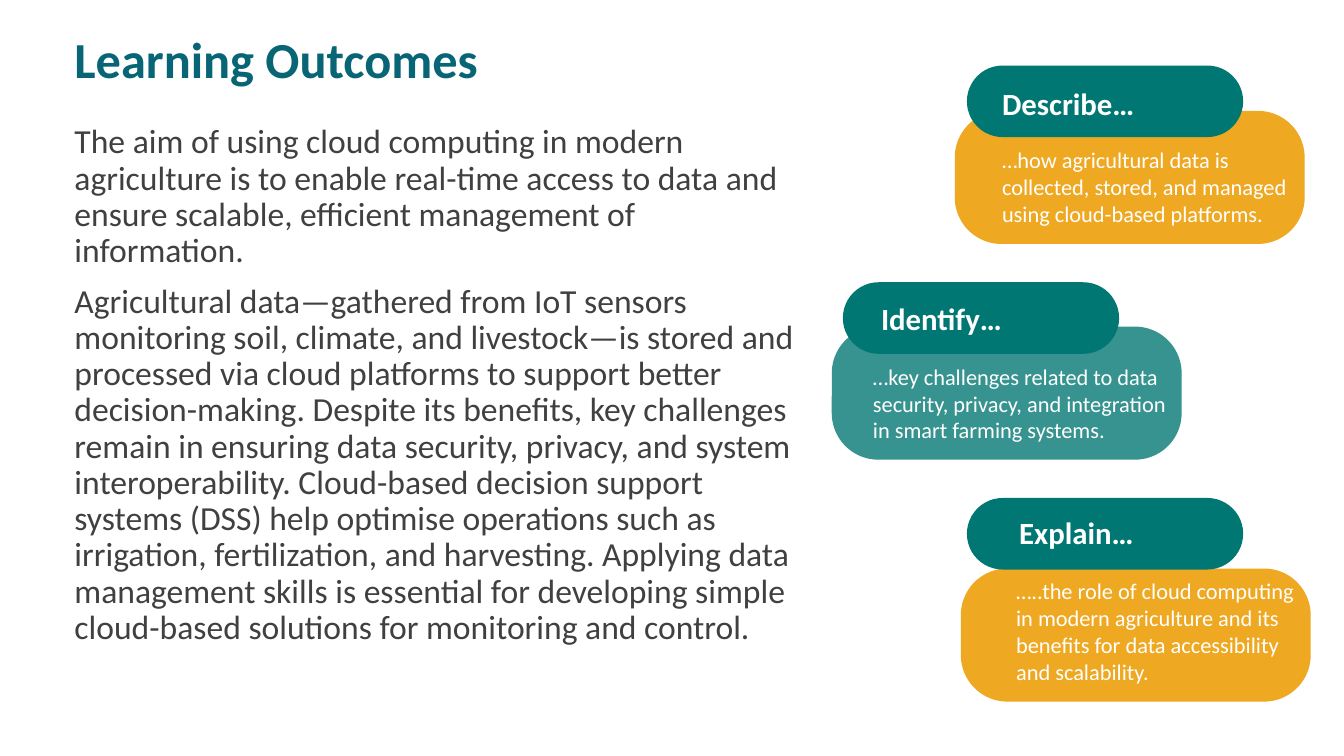
from lxml.etree import SubElement
from pptx import Presentation
from pptx.dml.color import RGBColor
from pptx.enum.shapes import MSO_SHAPE as SHAPE
from pptx.enum.text import MSO_ANCHOR as ANCHOR
from pptx.oxml.ns import qn
from pptx.util import Emu, Pt

EMU_PER_PX = 9144
TEAL, AMBER, WHITE = "007772", "EEA821", "FFFFFF"
TITLE_COLOR, BODY_COLOR = "086575", "404040"


def px(n):
    """Turn hundredths of an inch into EMU."""
    return Emu(n * EMU_PER_PX)


def rgb(value):
    """Turn a hex string into a colour."""
    return RGBColor.from_string(value)


class Deck:
    """Holds the style and the current slide."""

    font = "Calibri"
    card_size = (347, 132)
    pill_size = (274, 71)

    def __init__(self, prs):
        """Add a blank slide to draw on."""
        self.s = prs.slides.add_slide(prs.slide_layouts[6])

    def rounded(self, x, y, size, radius, color, alpha=100):
        """Draw a borderless rounded rectangle."""
        w, h = size
        sp = self.s.shapes.add_shape(SHAPE.ROUNDED_RECTANGLE, px(x), px(y), px(w), px(h))
        sp.adjustments[0] = radius
        sp.shadow.inherit = False
        sp.line.fill.background()
        sp.fill.solid()
        sp.fill.fore_color.rgb = rgb(color)
        if alpha < 100:
            clr = sp._element.spPr.find(qn("a:solidFill"))[0]
            SubElement(clr, qn("a:alpha"), val=str(alpha * 1000))

    def text(self, box, paragraphs, size, color, bold=False, spacing=None, gap=0):
        """Write paragraphs in a wrapping text box."""
        tf = self.s.shapes.add_textbox(*map(px, box)).text_frame
        tf.word_wrap = True
        tf.vertical_anchor = ANCHOR.TOP
        for i, words in enumerate(paragraphs):
            p = tf.add_paragraph() if i else tf.paragraphs[0]
            p.line_spacing = spacing
            if i:
                p.space_before = Pt(gap)
            r = p.add_run()
            r.text = words
            r.font.name = self.font
            r.font.size = Pt(size)
            r.font.bold = bold
            r.font.color.rgb = rgb(color)

    def card(self, card_at, pill_at, color, alpha, head_box, head, note_box, note):
        """Draw an outcome card with its heading pill."""
        self.rounded(*card_at, self.card_size, 0.35, color, alpha)
        self.rounded(*pill_at, self.pill_size, 0.5, TEAL)
        self.text(head_box, [head], 22, WHITE, bold=True)
        self.text(note_box, [note], 16, WHITE)


CARDS = [
    ((947, 110), (959, 65), AMBER, 100, (984, 79, 274, 47), "Describe…",
     (984, 140, 320, 118),
     "…how agricultural data is collected, stored, and managed using "
     "cloud-based platforms."),
    ((825, 324), (836, 280), TEAL, 79, (864, 292, 222, 47), "Identify…",
     (856, 355, 316, 91),
     "…key challenges related to data security, privacy, and integration "
     "in smart farming systems."),
    ((953, 564), (959, 494), AMBER, 100, (1001, 505, 212, 47), "Explain…",
     (998, 568, 306, 118),
     "…..the role of cloud computing in modern agriculture and its benefits "
     "for data accessibility and scalability."),
]

AIM = [
    "The aim of using cloud computing in modern agriculture is to enable "
    "real-time access to data and ensure scalable, efficient management of "
    "information.",
    "Agricultural data—gathered from IoT sensors monitoring soil, climate, and "
    "livestock—is stored and processed via cloud platforms to support better "
    "decision-making. Despite its benefits, key challenges remain in ensuring "
    "data security, privacy, and system interoperability. Cloud-based decision "
    "support systems (DSS) help optimise operations such as irrigation, "
    "fertilization, and harvesting. Applying data management skills is essential "
    "for developing simple cloud-based solutions for monitoring and control.",
]


def main():
    """Build and save the slide."""
    prs = Presentation()
    prs.slide_width, prs.slide_height = px(1333), px(750)
    deck = Deck(prs)
    for card in CARDS:
        deck.card(*card)
    deck.text((64, 119, 745, 541), AIM, 24, BODY_COLOR, spacing=0.9, gap=10)
    deck.text((64, 30, 800, 71), ["Learning Outcomes"], 36, TITLE_COLOR,
              bold=True, spacing=0.9)
    prs.save("out.pptx")


if __name__ == "__main__":
    main()
